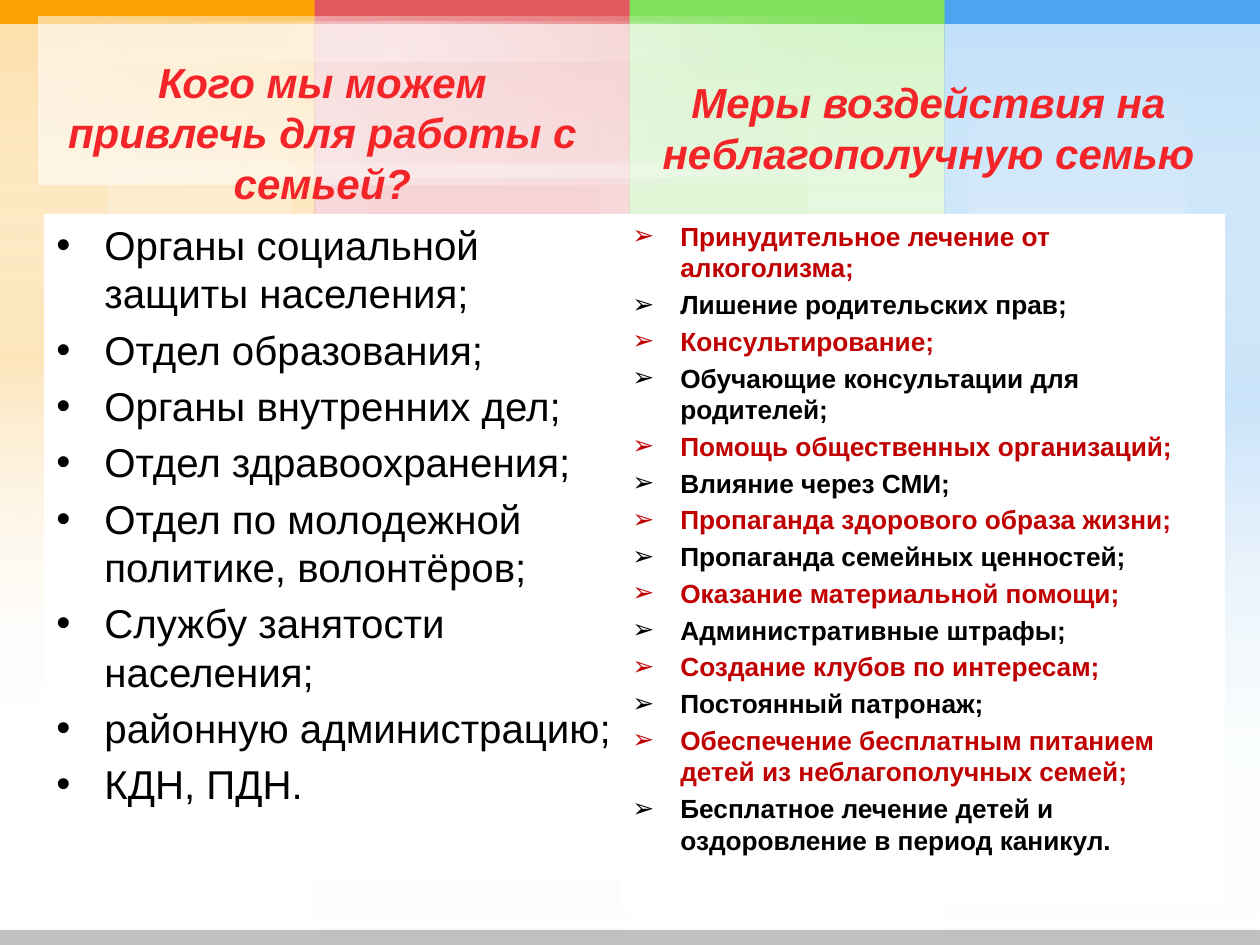
import pptx
import pptx.util
from lxml import etree
from pptx.dml.color import RGBColor
from pptx.enum.shapes import MSO_SHAPE
from pptx.enum.text import MSO_ANCHOR, PP_ALIGN
from pptx.oxml.ns import qn

PX = 914400 // 126  # EMU in one px
SLIDE_WIDTH, SLIDE_HEIGHT = 1260, 945
FONT = "Arial"

ORANGE = RGBColor(0xFC, 0xA3, 0x04)
CORAL = RGBColor(0xE1, 0x59, 0x5C)
GREEN = RGBColor(0x80, 0xE0, 0x5A)
BLUE = RGBColor(0x4B, 0xA5, 0xEF)
WHITE = RGBColor(0xFF, 0xFF, 0xFF)
GREY = RGBColor(0xC0, 0xC0, 0xC0)
BLACK = RGBColor(0x00, 0x00, 0x00)
DARK_RED = RGBColor(0xC0, 0x00, 0x00)
HEADING_RED = RGBColor(0xF3, 0x25, 0x28)

DOWN, RIGHTWARD = 270, 0  # gradient directions

# Colour, fade height, glow height, glows as (offset, width)
COLUMNS = [
    (ORANGE, 709, 709, [(292, 23), (0, 106)]),
    (CORAL, 945, 945, [(53, 231)]),
    (GREEN, 709, 709, [(0, 178)]),
    (BLUE, 941, 803, [(0, 24), (241, 74)]),
]

HELPERS = [
    "Органы социальной защиты населения;",
    "Отдел образования;",
    "Органы внутренних дел;",
    "Отдел здравоохранения;",
    "Отдел по молодежной политике, волонтёров;",
    "Службу занятости населения;",
    "районную администрацию;",
    "КДН, ПДН.",
]
MEASURES = [
    "Принудительное лечение от алкоголизма;",
    "Лишение родительских прав;",
    "Консультирование;",
    "Обучающие консультации для родителей;",
    "Помощь общественных организаций;",
    "Влияние через СМИ;",
    "Пропаганда здорового образа жизни;",
    "Пропаганда семейных ценностей;",
    "Оказание материальной помощи;",
    "Административные штрафы;",
    "Создание клубов по интересам;",
    "Постоянный патронаж;",
    "Обеспечение бесплатным питанием детей из неблагополучных семей;",
    "Бесплатное лечение детей и оздоровление в период каникул.",
]


def emu(*lengths):
    return [pptx.util.Emu(length * PX) for length in lengths]


def add_rectangle(page, box, color=None):
    shape = page.shapes.add_shape(MSO_SHAPE.RECTANGLE, *emu(*box))
    shape.shadow.inherit = False
    shape.line.fill.background()
    if color is not None:
        shape.fill.solid()
        shape.fill.fore_color.rgb = color
    return shape


def add_gradient(page, box, stops, angle):
    """Draw a rectangle whose stops are (position %, colour, opacity %)."""
    shape = add_rectangle(page, box)
    shape.fill.gradient()
    shape.fill.gradient_angle = angle
    stop_list = shape._element.spPr.find(".//" + qn("a:gsLst"))
    for stop in list(stop_list):
        stop_list.remove(stop)
    for position, color, opacity in stops:
        stop = etree.SubElement(stop_list, qn("a:gs"), pos=str(position * 1000))
        fill = etree.SubElement(stop, qn("a:srgbClr"), val=str(color))
        etree.SubElement(fill, qn("a:alpha"), val=str(opacity * 1000))


def add_fade(page, box, color, opacity, angle):
    add_gradient(page, box, [(0, color, opacity), (100, WHITE, 0)], angle)


def add_glow(page, box, color, opacity, angle):
    stops = [(0, WHITE, 0), (50, color, opacity), (100, WHITE, 0)]
    add_gradient(page, box, stops, angle)


def add_color_columns(page, left, top, width):
    column_width = width // len(COLUMNS)
    for index, (color, fade_height, glow_height, glows) in enumerate(COLUMNS):
        x = left + index * column_width
        fade_box = (x, top, column_width, fade_height)
        add_fade(page, fade_box, color, 20, DOWN)
        for offset, glow_width in glows:
            add_glow(page, (x + offset, top, glow_width, glow_height), color, 20, DOWN)
        add_fade(page, fade_box, color, 20, DOWN)
        add_rectangle(page, (x, top, column_width, 24), color)


def add_title_haze(page, left, top, width, height):
    add_glow(page, (left + 4, top + 147, 975, 14), WHITE, 35, RIGHTWARD)
    add_fade(page, (left, top, width, height), WHITE, 35, RIGHTWARD)
    add_glow(page, (left - 6, top + 5, 742, 40), WHITE, 35, RIGHTWARD)
    add_fade(page, (left, top, width, height), WHITE, 35, RIGHTWARD)


def format_text(para, size, color, bold=False, italic=False):
    para.line_spacing = pptx.util.Pt(size * 1.2)
    for span in para.runs:
        span.font.name = FONT
        span.font.size = pptx.util.Pt(size)
        span.font.color.rgb = color
        span.font.bold = bold
        span.font.italic = italic


def add_heading(page, box, text):
    heading = page.shapes.add_textbox(*emu(*box))
    frame = heading.text_frame
    frame.word_wrap = True
    frame.vertical_anchor = MSO_ANCHOR.BOTTOM
    frame.text = text
    para = frame.paragraphs[0]
    para.alignment = PP_ALIGN.CENTER
    format_text(para, 24, HEADING_RED, bold=True, italic=True)


def add_bullet(para, symbol):
    properties = para._p.get_or_add_pPr()
    indent = 48 * PX
    properties.set("marL", str(indent))
    properties.set("indent", str(-indent))
    etree.SubElement(properties, qn("a:buFont"), typeface=FONT)
    etree.SubElement(properties, qn("a:buChar"), char=symbol)


def add_list(page, box, items, symbol, size, colors, bold=False):
    """Fill a white panel with bullets, taking the colours in turn."""
    frame = add_rectangle(page, box, WHITE).text_frame
    frame.word_wrap = True
    frame.vertical_anchor = MSO_ANCHOR.TOP
    frame.text = "\n".join(items)
    for index, para in enumerate(frame.paragraphs):
        add_bullet(para, symbol)
        para.alignment = PP_ALIGN.LEFT
        if index:
            para.space_before = pptx.util.Pt(size * 0.2)
        format_text(para, size, colors[index % len(colors)], bold)


def main():
    deck = pptx.Presentation()
    deck.slide_width, deck.slide_height = emu(SLIDE_WIDTH, SLIDE_HEIGHT)
    page = deck.slides.add_slide(deck.slide_layouts[6])

    # Background
    add_color_columns(page, 0, 0, SLIDE_WIDTH)
    add_title_haze(page, 39, 17, 869, 168)
    add_rectangle(page, (0, 930, SLIDE_WIDTH, 15), GREY)

    # Who can help
    add_heading(page, (44, 76, 557, 138), "Кого мы можем привлечь для работы с семьей?")
    add_list(page, (44, 214, 585, 665), HELPERS, "•", 23, [BLACK])

    # Measures
    add_heading(page, (650, 45, 557, 139), "Меры воздействия на неблагополучную семью")
    add_list(page, (620, 214, 605, 694), MEASURES, "➢", 15, [DARK_RED, BLACK], bold=True)

    deck.save("out.pptx")


if __name__ == "__main__":
    main()
